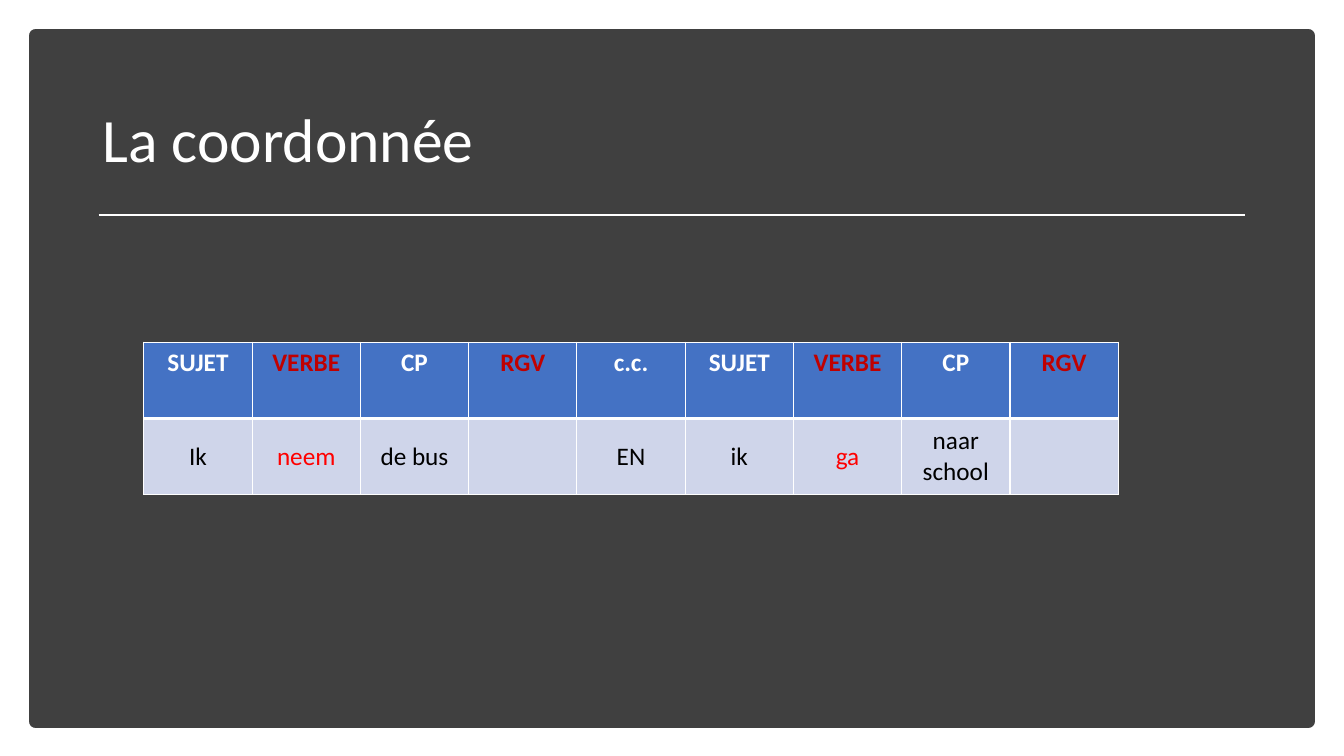
from lxml import etree
from pptx import Presentation
from pptx import util as u
from pptx.dml.color import RGBColor
from pptx.enum import shapes, text
from pptx.oxml import ns

PX = 9525  # EMU per px, at 96 px to the inch
FONT = "Calibri"
WHITE, BLACK, CHARCOAL = "FFFFFF", "000000", "404040"
HEADER_FILL, BODY_FILL = "4472C4", "CFD5EA"
HEADER_RED, BODY_RED = "C00000", "FF0000"

HEADERS = ["SUJET", "VERBE", "CP", "RGV", "c.c.", "SUJET", "VERBE", "CP", "RGV"]
SENTENCE = ["Ik", "neem", "de bus", "", "EN", "ik", "ga", "naar school", ""]
VERB_PARTS = ("VERBE", "RGV")


def px(length):
    return u.Emu(length * PX)


def color(hex_string):
    return RGBColor.from_string(hex_string)


def style_font(paragraph, size, hex_string, bold=False):
    font = paragraph.font
    font.name, font.size, font.bold = FONT, u.Pt(size), bold
    font.color.rgb = color(hex_string)


def set_borders(cell, **widths):
    """Draw white borders; widths maps lnL, lnR, lnT, lnB to points."""
    properties = cell._tc.get_or_add_tcPr()
    for index, (side, width) in enumerate(widths.items()):
        line = etree.Element(ns.qn(f"a:{side}"), w=str(u.Pt(width)))
        fill = etree.SubElement(line, ns.qn("a:solidFill"))
        etree.SubElement(fill, ns.qn("a:srgbClr"), val=WHITE)
        properties.insert(index, line)


def add_panel(slide, left, top, width, height):
    panel = slide.shapes.add_shape(
        shapes.MSO_SHAPE.RECTANGLE, px(left), px(top), px(width), px(height))
    panel.shadow.inherit = False
    panel.fill.solid()
    panel.fill.fore_color.rgb = color(CHARCOAL)
    panel.line.color.rgb = color(CHARCOAL)
    panel.line.width = u.Pt(10)


def add_title(slide, left, top, width, height, title):
    # Title text
    box = slide.shapes.add_textbox(px(left), px(top), px(width), px(height))
    frame = box.text_frame
    frame.word_wrap = True
    frame.vertical_anchor = text.MSO_ANCHOR.MIDDLE
    paragraph = frame.paragraphs[0]
    paragraph.text = title
    paragraph.line_spacing = 0.9
    style_font(paragraph, 44, WHITE)

    # Rule along the foot of the title
    inset = 6
    bottom = px(top + height)
    rule = slide.shapes.add_connector(
        shapes.MSO_CONNECTOR.STRAIGHT,
        px(left + inset), bottom, px(left + width - inset), bottom)
    rule.line.color.rgb = color(WHITE)
    rule.line.width = u.Pt(1.75)
    etree.SubElement(rule._element.spPr, ns.qn("a:effectLst"))


def fill_cell(cell, words, is_header, is_verb):
    cell.fill.solid()
    cell.fill.fore_color.rgb = color(HEADER_FILL if is_header else BODY_FILL)
    cell.vertical_anchor = (
        text.MSO_ANCHOR.TOP if is_header else text.MSO_ANCHOR.MIDDLE)
    plain, red = (WHITE, HEADER_RED) if is_header else (BLACK, BODY_RED)
    paragraph = cell.text_frame.paragraphs[0]
    paragraph.text = words
    paragraph.alignment = text.PP_ALIGN.CENTER
    style_font(paragraph, 18, red if is_verb else plain, is_header)
    set_borders(cell, lnL=1, lnR=1,
                lnT=1 if is_header else 3, lnB=3 if is_header else 1)


def add_sentence_table(slide, left, top, width, height):
    rows = [HEADERS, SENTENCE]
    table = slide.shapes.add_table(
        len(rows), len(HEADERS),
        px(left), px(top), px(width), px(height)).table
    for row_index, row in enumerate(rows):
        for column_index, words in enumerate(row):
            fill_cell(table.cell(row_index, column_index), words,
                      row_index == 0, HEADERS[column_index] in VERB_PARTS)


def main():
    presentation = Presentation()
    presentation.slide_width, presentation.slide_height = px(1280), px(720)
    slide = presentation.slides.add_slide(presentation.slide_layouts[6])
    add_panel(slide, 34, 34, 1212, 653)
    add_title(slide, 88, 66, 1104, 139, "La coordonnée")
    add_sentence_table(slide, 137, 326, 928, 145)
    presentation.save("out.pptx")


if __name__ == "__main__":
    main()
